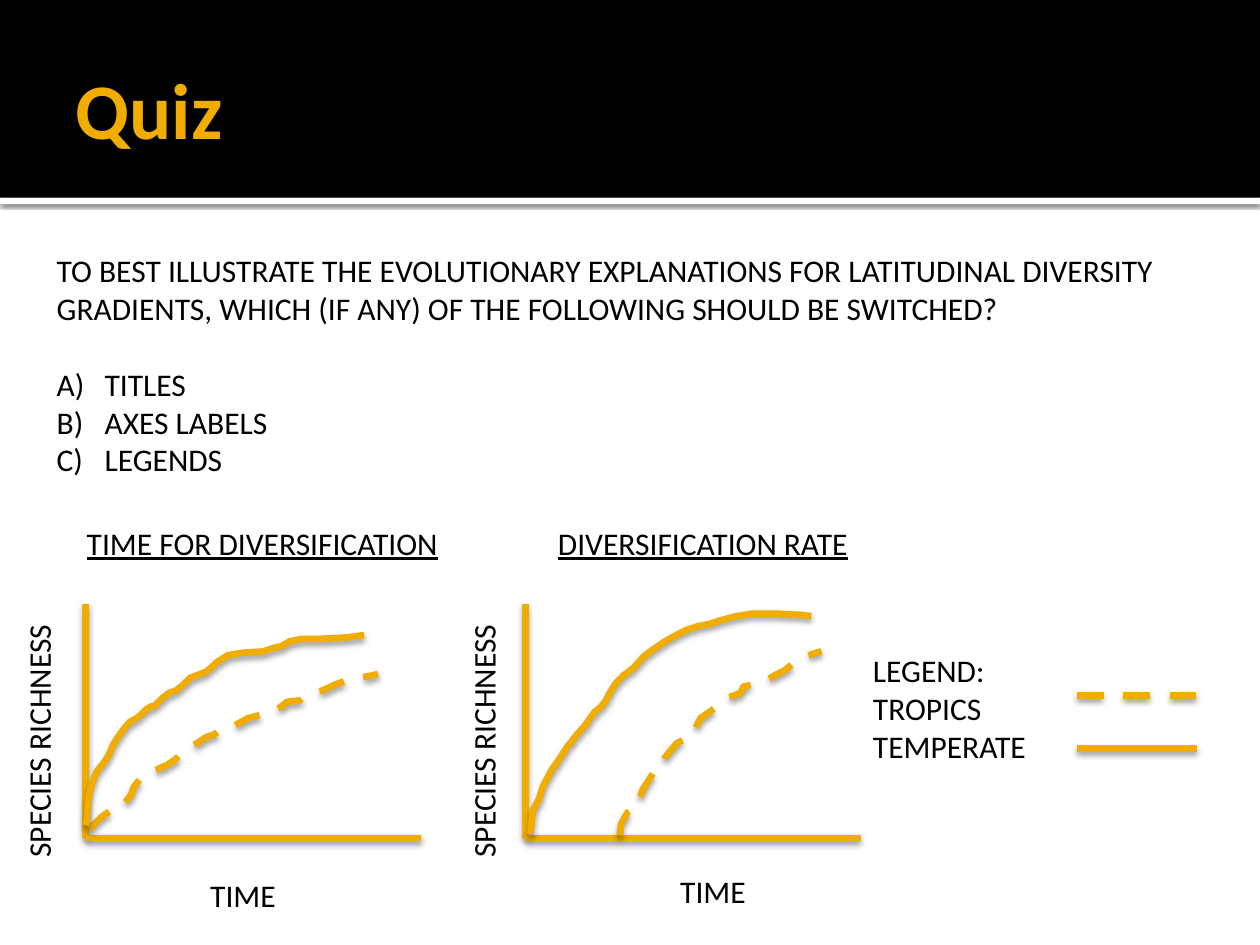
from lxml import etree
from pptx import Presentation
from pptx import util as u
from pptx.dml.color import RGBColor
from pptx.enum import dml, shapes, text
from pptx.oxml import ns

GOLD, BLACK, WHITE = "F0AD00", "000000", "FFFFFF"
FONT = "Calibri"
color = RGBColor.from_string


def add_shadow(shape, opacity, blur, distance):
    effects = etree.SubElement(shape._element.spPr, ns.qn("a:effectLst"))
    shadow = etree.SubElement(effects, ns.qn("a:outerShdw"), blurRad=str(u.Pt(blur)),
                              dist=str(u.Pt(distance)), dir="5400000", rotWithShape="0")
    shade = etree.SubElement(shadow, ns.qn("a:srgbClr"), val=BLACK)
    etree.SubElement(shade, ns.qn("a:alpha"), val=str(opacity * 1000))


def style_line(shape, dashed):
    shape.line.color.rgb = color(GOLD)
    shape.line.width = u.Pt(3.78)
    if dashed:
        shape.line.dash_style = dml.MSO_LINE.DASH
    add_shadow(shape, 38, 3.5, 2)


presentation = Presentation()
presentation.slide_width = u.Inches(10)
presentation.slide_height = u.Inches(7.5)
slide = presentation.slides.add_slide(presentation.slide_layouts[1])
slide.background.fill.solid()
slide.background.fill.fore_color.rgb = color(WHITE)

title, question = slide.placeholders
tree = slide.shapes._spTree

for position, (top, height, fill) in enumerate([(1.57, 0.05, WHITE), (0, 1.57, BLACK)]):
    band = slide.shapes.add_shape(shapes.MSO_SHAPE.RECTANGLE, 0, u.Inches(top),
                                  u.Inches(10), u.Inches(height))
    band.fill.solid()
    band.fill.fore_color.rgb = color(fill)
    band.line.fill.background()
    if fill == WHITE:
        add_shadow(band, 60, 2.5, 0.8)
    else:
        band.shadow.inherit = False
    tree.insert(2 + position, band._element)

title.left, title.top = u.Inches(0.5), u.Inches(0.17)
title.width, title.height = u.Inches(9), u.Inches(1.37)
frame = title.text_frame
frame.auto_size = text.MSO_AUTO_SIZE.NONE
frame.vertical_anchor = text.MSO_ANCHOR.MIDDLE
frame.margin_right = u.Inches(0.05)
paragraph = frame.paragraphs[0]
paragraph.alignment = text.PP_ALIGN.LEFT
run = paragraph.add_run()
run.text = "Quiz"
run.font.name, run.font.size, run.font.bold = FONT, u.Pt(45), True
run.font.color.rgb = color(GOLD)

question.left, question.top = u.Inches(0.35), u.Inches(1.94)
question.width, question.height = u.Inches(9.41), u.Inches(1.92)
frame = question.text_frame
frame.auto_size = text.MSO_AUTO_SIZE.NONE
lines = [
    "TO BEST ILLUSTRATE THE EVOLUTIONARY EXPLANATIONS FOR LATITUDINAL DIVERSITY "
    "GRADIENTS, WHICH (IF ANY) OF THE FOLLOWING SHOULD BE SWITCHED?",
    "TITLES", "AXES LABELS", "LEGENDS",
]
for index, line in enumerate(lines):
    paragraph = frame.paragraphs[0] if index == 0 else frame.add_paragraph()
    properties = paragraph._p.get_or_add_pPr()
    indent = u.Inches(0.38) if index else 0
    properties.set("marL", str(indent))
    properties.set("indent", str(-indent))
    if index:
        etree.SubElement(properties, ns.qn("a:buFont"), typeface="+mj-lt")
        etree.SubElement(properties, ns.qn("a:buAutoNum"), type="alphaUcParenR")
    else:
        etree.SubElement(properties, ns.qn("a:buNone"))
    paragraph.space_before = u.Pt(22 if index == 1 else 0)
    run = paragraph.add_run()
    run.text = line
    run.font.name, run.font.size = FONT, u.Pt(18)
    run.font.color.rgb = color(BLACK)

axes = [
    segment
    for left in (0.68, 4.17)
    for segment in ((left, 4.79, left, 6.65, False), (left + 2.66, 6.65, left, 6.65, False))
]
legend_keys = [(8.55, 5.52, 9.5, 5.52, True), (8.55, 5.94, 9.5, 5.94, False)]
for x1, y1, x2, y2, dashed in axes + legend_keys:
    connector = slide.shapes.add_connector(
        shapes.MSO_CONNECTOR.STRAIGHT, u.Inches(x1), u.Inches(y1), u.Inches(x2), u.Inches(y2))
    style_line(connector, dashed)

time_tropics = [
    (71, 658), (80, 649), (91, 641), (97, 640), (100, 636), (104, 631), (106, 625),
    (113, 616), (122, 612), (133, 607), (139, 603), (143, 599), (153, 592), (164, 585),
    (170, 583), (175, 579), (186, 576), (197, 570), (216, 565), (223, 561), (228, 557),
    (238, 556), (243, 552), (256, 548), (267, 543), (278, 539), (291, 537), (300, 535),
]
rate_tropics = [
    (492, 663), (493, 654), (498, 645), (506, 640), (510, 627), (517, 616), (521, 610),
    (526, 607), (528, 601), (537, 590), (543, 587), (546, 581), (552, 578), (556, 570),
    (566, 563), (572, 559), (577, 554), (588, 550), (590, 545), (599, 543), (607, 541),
    (615, 536), (623, 532), (634, 523), (645, 519), (652, 517),
]
time_temperate = [
    (68, 655), (69, 650), (70, 636), (72, 625), (77, 612), (82, 606), (86, 600), (90, 591),
    (93, 586), (98, 579), (103, 573), (110, 569), (115, 564), (119, 561), (123, 560),
    (129, 554), (134, 550), (140, 548), (147, 542), (151, 538), (156, 536), (164, 533),
    (173, 525), (181, 520), (187, 519), (193, 518), (209, 517), (218, 514), (223, 513),
    (230, 509), (240, 507), (254, 507), (274, 506), (282, 505), (289, 504),
]
rate_temperate = [
    (421, 662), (423, 643), (428, 634), (431, 624), (438, 611), (443, 604), (450, 593),
    (458, 583), (465, 575), (472, 565), (477, 561), (481, 556), (484, 550), (489, 542),
    (495, 536), (503, 530), (511, 521), (519, 515), (528, 509), (537, 504), (545, 500),
    (554, 497), (564, 495), (573, 492), (585, 489), (597, 487), (616, 487), (635, 488),
    (644, 489),
]
curves = [(time_tropics, True), (rate_tropics, True),
          (time_temperate, False), (rate_temperate, False)]
for points, dashed in curves:
    builder = slide.shapes.build_freeform(*points[0], scale=u.Inches(0.01))
    builder.add_line_segments(points[1:], close=False)
    curve = builder.convert_to_shape()
    curve.fill.background()
    style_line(curve, dashed)

labels = [
    (["TIME"], 1.57, 6.9, 0.75, 0.4, 0, False),
    (["TIME"], 5.3, 6.87, 0.75, 0.4, 0, False),
    (["SPECIES RICHNESS"], -0.84, 5.56, 2.29, 0.4, 270, False),
    (["SPECIES RICHNESS"], 2.69, 5.56, 2.29, 0.4, 270, False),
    (["LEGEND:", "TROPICS", "TEMPERATE"], 6.83, 5.12, 1.55, 1.01, 0, False),
    (["DIVERSIFICATION RATE"], 4.33, 4.11, 2.75, 0.4, 0, True),
    (["TIME FOR DIVERSIFICATION"], 0.59, 4.11, 3.23, 0.4, 0, True),
]
for lines, left, top, width, height, rotation, underlined in labels:
    label = slide.shapes.add_textbox(u.Inches(left), u.Inches(top),
                                     u.Inches(width), u.Inches(height))
    label.rotation = rotation
    frame = label.text_frame
    frame.word_wrap = True
    for index, line in enumerate(lines):
        paragraph = frame.paragraphs[0] if index == 0 else frame.add_paragraph()
        run = paragraph.add_run()
        run.text = line
        run.font.name, run.font.size = FONT, u.Pt(18)
        run.font.color.rgb = color(BLACK)
        if underlined:
            run.font.underline = True

presentation.save("out.pptx")
